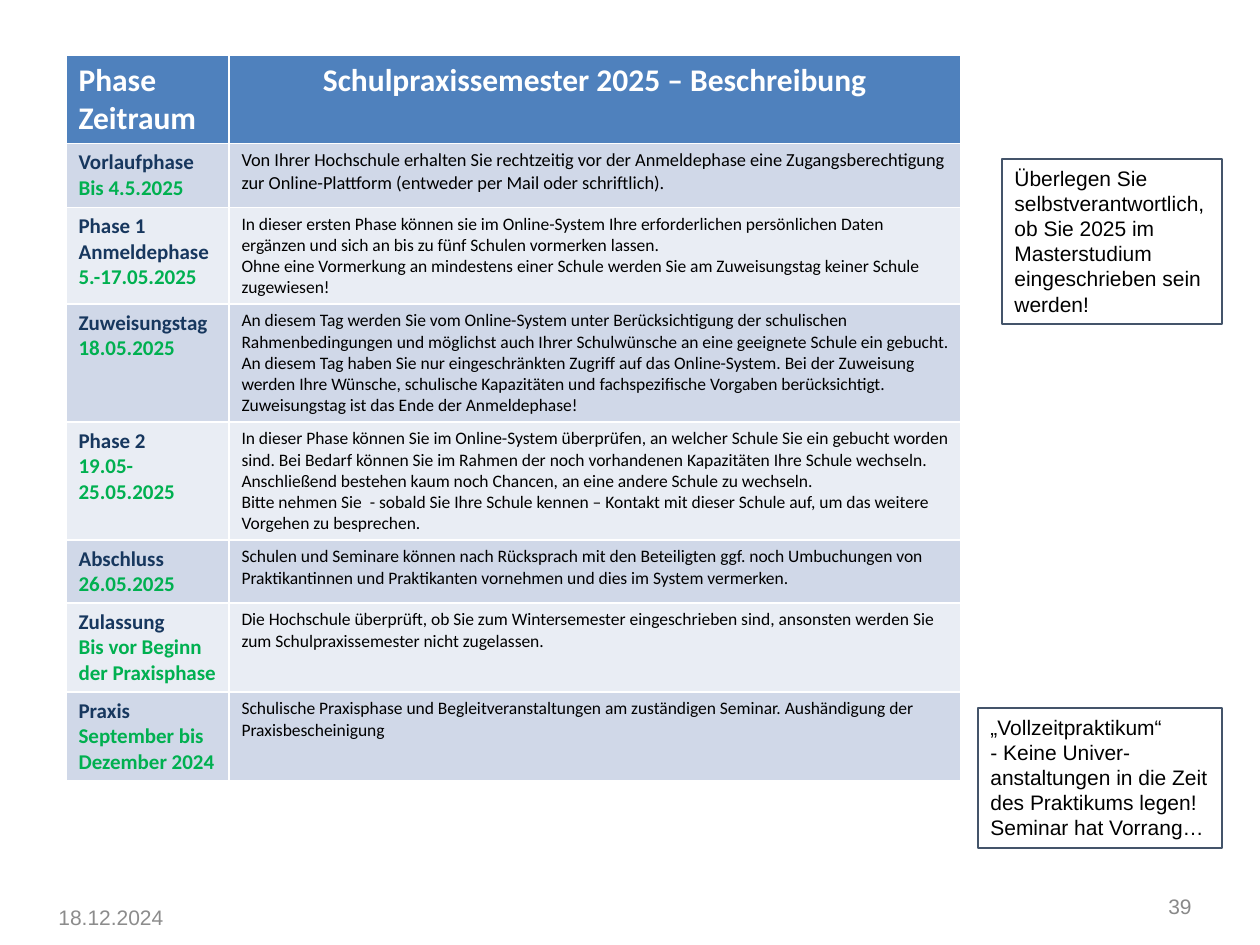
"""Build the slide with the phases of the Schulpraxissemester 2025."""
from dataclasses import dataclass

import pptx
import pptx.dml.color
import pptx.enum.shapes
import pptx.enum.text
import pptx.util

ALIGN = pptx.enum.text.PP_ALIGN
ANCHOR = pptx.enum.text.MSO_ANCHOR
PX_PER_INCH = 126
COLOURS = {
    "header": "4F81BD",
    "band_dark": "D0D8E8",
    "band_light": "E9EDF4",
    "phase": "17375E",
    "period": "00B050",
    "frame": "44546A",
    "page_number": "898989",
    "date": "8C8C8C",
    "white": "FFFFFF",
    "black": "000000",
}


@dataclass(frozen=True)
class Area:
    left: int
    top: int
    width: int
    height: int


@dataclass(frozen=True)
class Style:
    size: float
    colour: str
    font: str = "Calibri"
    bold: bool = False
    align: ALIGN = ALIGN.LEFT


@dataclass(frozen=True)
class Phase:
    names: list[str]
    period: str
    description: list[str]
    height: int
    size: float = 10


@dataclass(frozen=True)
class Note:
    area: Area
    lines: list[str]


@dataclass(frozen=True)
class Footer:
    area: Area
    text: str
    style: Style


TABLE_AREA = Area(66, 55, 895, 723)
COLUMN_WIDTHS = [163, 732]
HEADER_HEIGHT = 88
HEADER = Style(18, "white", bold=True)
HEADER_CENTRED = Style(18, "white", bold=True, align=ALIGN.CENTER)
PHASE_NAME = Style(12, "phase", bold=True)
PERIOD = Style(12, "period", bold=True)
NOTE = Style(12, "black", "Arial")

PHASES = [
    Phase(["Vorlaufphase"], "Bis 4.5.2025", [
        "Von Ihrer Hochschule erhalten Sie rechtzeitig vor der Anmeldephase eine "
        "Zugangsberechtigung zur Online-Plattform (entweder per Mail oder schriftlich)."], 64, 10.5),
    Phase(["Phase 1", "Anmeldephase"], "5.-17.05.2025", [
        "In dieser ersten Phase können sie im Online-System Ihre erforderlichen persönlichen "
        "Daten ergänzen und sich an bis zu fünf Schulen vormerken lassen.",
        "Ohne eine Vormerkung an mindestens einer Schule werden Sie am Zuweisungstag "
        "keiner Schule zugewiesen!"], 96),
    Phase(["Zuweisungstag"], "18.05.2025", [
        "An diesem Tag werden Sie vom Online-System unter Berücksichtigung der schulischen "
        "Rahmenbedingungen und möglichst auch Ihrer Schulwünsche an eine geeignete Schule ein "
        "gebucht. An diesem Tag haben Sie nur eingeschränkten Zugriff auf das Online-System. "
        "Bei der Zuweisung werden Ihre Wünsche, schulische Kapazitäten und fachspezifische "
        "Vorgaben berücksichtigt. Zuweisungstag ist das Ende der Anmeldephase!"], 118),
    Phase(["Phase 2"], "19.05-25.05.2025", [
        "In dieser Phase können Sie im Online-System überprüfen, an welcher Schule Sie ein "
        "gebucht worden sind. Bei Bedarf können Sie im Rahmen der noch vorhandenen Kapazitäten "
        "Ihre Schule wechseln. Anschließend bestehen kaum noch Chancen, an eine andere Schule "
        "zu wechseln.",
        "Bitte nehmen Sie  - sobald Sie Ihre Schule kennen – Kontakt mit dieser Schule auf, "
        "um das weitere Vorgehen zu besprechen."], 118),
    Phase(["Abschluss"], "26.05.2025", [
        "Schulen und Seminare können nach Rücksprach mit den Beteiligten ggf. noch Umbuchungen "
        "von Praktikantinnen und Praktikanten vornehmen und dies im System vermerken."], 62),
    Phase(["Zulassung"], "Bis vor Beginn der Praxisphase", [
        "Die Hochschule überprüft, ob Sie zum Wintersemester eingeschrieben sind, ansonsten "
        "werden Sie zum Schulpraxissemester nicht zugelassen."], 89),
    Phase(["Praxis"], "September bis Dezember 2024", [
        "Schulische Praxisphase und Begleitveranstaltungen am zuständigen Seminar. "
        "Aushändigung der Praxisbescheinigung"], 88),
]
NOTES = [
    Note(Area(1002, 159, 220, 165), [
        "Überlegen Sie selbstverantwortlich, ob Sie 2025 im Masterstudium "
        "eingeschrieben sein werden!"]),
    Note(Area(978, 708, 244, 140), [
        "„Vollzeitpraktikum“",
        "- Keine Univer-anstaltungen in die Zeit des Praktikums legen! Seminar hat Vorrang…"]),
]
FOOTERS = [
    Footer(Area(942, 875, 262, 63), "39", Style(12, "page_number", "Arial", align=ALIGN.RIGHT)),
    Footer(Area(0, 892, 222, 50), "18.12.2024", Style(12, "date", "Arial", align=ALIGN.CENTER)),
]


def px(length: int) -> int:
    return pptx.util.Emu(round(length * 914400 / PX_PER_INCH))


def bounds(area: Area) -> tuple[int, int, int, int]:
    return px(area.left), px(area.top), px(area.width), px(area.height)


def rgb(name: str) -> pptx.dml.color.RGBColor:
    return pptx.dml.color.RGBColor.from_string(COLOURS[name])


def write(frame, lines: list[tuple[str, Style]]) -> None:
    frame.word_wrap = True
    for index, (text, style) in enumerate(lines):
        para = frame.add_paragraph() if index else frame.paragraphs[0]
        para.alignment = style.align
        span = para.add_run()
        span.text = text
        span.font.name = style.font
        span.font.size = pptx.util.Pt(style.size)
        span.font.bold = style.bold
        span.font.color.rgb = rgb(style.colour)


def fill_cell(cell, colour: str, lines: list[tuple[str, Style]]) -> None:
    cell.fill.solid()
    cell.fill.fore_color.rgb = rgb(colour)
    write(cell.text_frame, lines)


def draw_table(page) -> None:
    table = page.shapes.add_table(len(PHASES) + 1, 2, *bounds(TABLE_AREA)).table
    for column, width in zip(table.columns, COLUMN_WIDTHS):
        column.width = px(width)
    table.rows[0].height = px(HEADER_HEIGHT)
    fill_cell(table.cell(0, 0), "header", [("Phase", HEADER), ("Zeitraum", HEADER)])
    fill_cell(table.cell(0, 1), "header",
              [("Schulpraxissemester 2025 – Beschreibung", HEADER_CENTRED)])
    for row, phase in enumerate(PHASES, start=1):
        table.rows[row].height = px(phase.height)
        band = "band_dark" if row % 2 else "band_light"
        names = [(name, PHASE_NAME) for name in phase.names]
        fill_cell(table.cell(row, 0), band, names + [(phase.period, PERIOD)])
        body = Style(phase.size, "black")
        fill_cell(table.cell(row, 1), band, [(text, body) for text in phase.description])


def draw_note(page, note: Note) -> None:
    box = page.shapes.add_shape(pptx.enum.shapes.MSO_SHAPE.RECTANGLE, *bounds(note.area))
    box.shadow.inherit = False
    box.fill.background()
    box.line.color.rgb = rgb("frame")
    box.line.width = pptx.util.Pt(0.75)
    box.text_frame.vertical_anchor = ANCHOR.TOP
    write(box.text_frame, [(line, NOTE) for line in note.lines])


def draw_footer(page, footer: Footer) -> None:
    box = page.shapes.add_textbox(*bounds(footer.area))
    box.text_frame.vertical_anchor = ANCHOR.MIDDLE
    write(box.text_frame, [(footer.text, footer.style)])


def main() -> None:
    deck = pptx.Presentation()
    deck.slide_width, deck.slide_height = px(1260), px(945)
    page = deck.slides.add_slide(deck.slide_layouts[6])
    for footer in FOOTERS:
        draw_footer(page, footer)
    for note in NOTES:
        draw_note(page, note)
    draw_table(page)
    deck.save("out.pptx")


if __name__ == "__main__":
    main()
